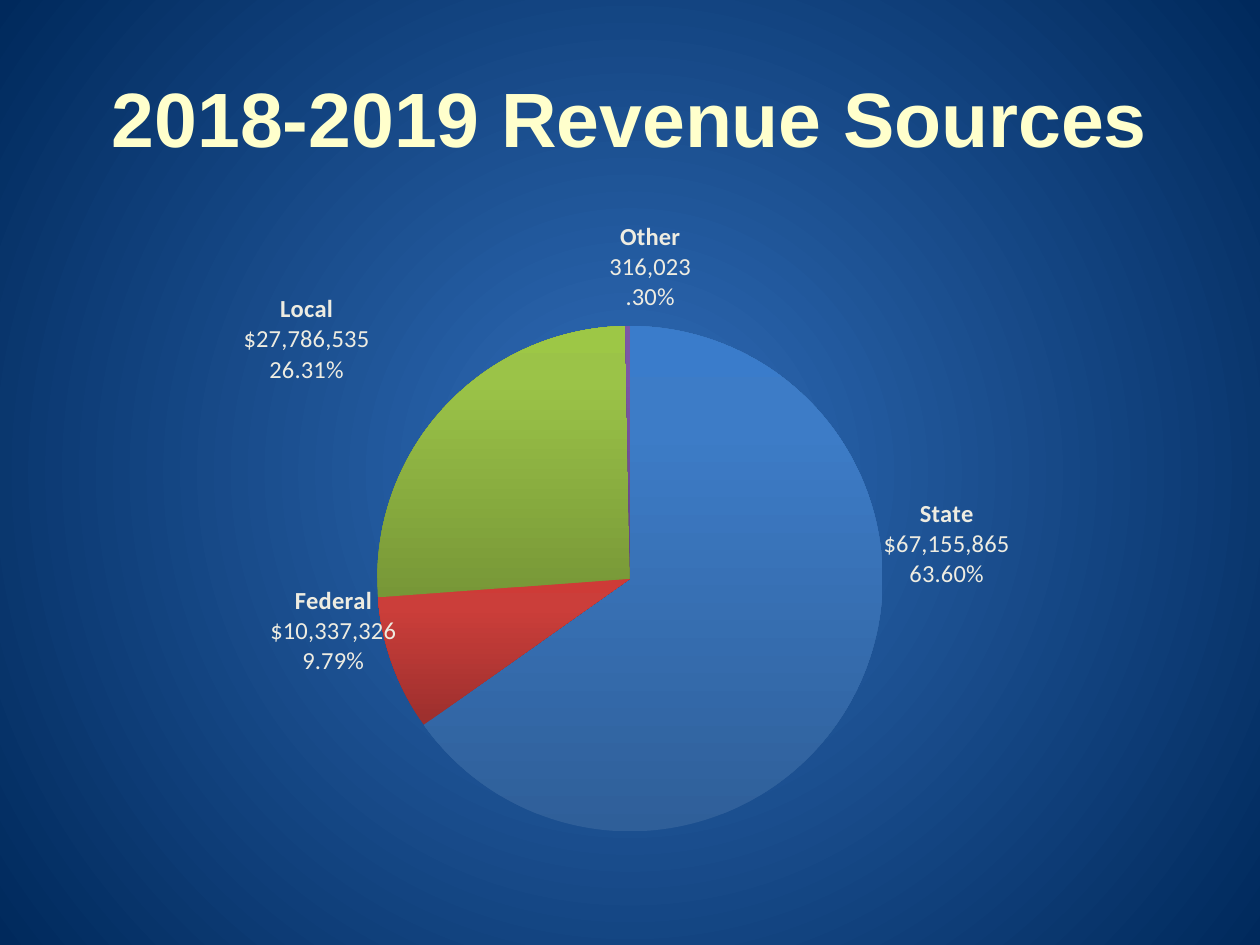
import lxml.etree
import pptx
import pptx.chart.data
import pptx.dml.color
import pptx.enum.chart
import pptx.enum.text
import pptx.oxml
import pptx.oxml.ns
import pptx.util

RGB = pptx.dml.color.RGBColor
qn = pptx.oxml.ns.qn

CREAM = RGB(0xFF, 0xFF, 0xCC)
IVORY = RGB(0xEE, 0xEC, 0xE1)
WHITE = RGB(0xFF, 0xFF, 0xFF)
BACKDROP = [(10, RGB(0x2C, 0x67, 0xB0)), (100, RGB(0x00, 0x29, 0x5C))]
BLUES = RGB(0x2F, 0x5F, 0x99), RGB(0x3D, 0x7C, 0xC7), RGB(0x3A, 0x7C, 0xCB)
REDS = RGB(0x9C, 0x2F, 0x2D), RGB(0xCB, 0x3E, 0x3A), RGB(0xCE, 0x3B, 0x37)
GREENS = RGB(0x77, 0x97, 0x37), RGB(0x9B, 0xC3, 0x48), RGB(0x9D, 0xC7, 0x46)
PURPLES = RGB(0x5F, 0x44, 0x80), RGB(0x7B, 0x58, 0xA6), RGB(0x7C, 0x57, 0xA8)
SLICE_STOPS = 0, 80, 100

TITLE = "2018-2019 Revenue Sources"
# value, label lines, slice colours, label shift from its usual place in px
SOURCES = [
    (63935033, ("State", "$67,155,865", "63.60%"), BLUES, (18, -198)),
    (8462507, ("Federal", "$10,337,326", "9.79%"), REDS, (8, -79)),
    (25383613, ("Local", "$27,786,535", "26.31%"), GREENS, (-65, -16)),
    (287516, ("Other", "316,023", ".30%"), PURPLES, (27, -6)),
]

EMU_PER_PX = 914400 / 126
TITLE_BOX = 63, 38, 1134, 158
CHART_BOX = 63, 220, 1134, 624
PLOT_LAYOUT = {"layoutTarget": "inner", "xMode": "edge", "yMode": "edge",
               "x": 0.08, "y": 0.17, "w": 0.84, "h": 0.81}


def emu(box):
    return [pptx.util.Emu(round(px * EMU_PER_PX)) for px in box]


def write(paragraph, text, size, font, color, bold=False):
    run = paragraph.add_run()
    run.text = text
    run.font.size = pptx.util.Pt(size)
    run.font.name = font
    run.font.bold = bold
    run.font.color.rgb = color
    paragraph.alignment = pptx.enum.text.PP_ALIGN.CENTER


def set_gradient(grad_fill, stops, circle=False):
    """Replace the content of a gradFill with the given stops and direction."""
    for child in list(grad_fill):
        grad_fill.remove(child)
    stop_list = lxml.etree.SubElement(grad_fill, qn("a:gsLst"))
    for percent, color in stops:
        stop = lxml.etree.SubElement(stop_list, qn("a:gs"), pos=str(percent * 1000))
        lxml.etree.SubElement(stop, qn("a:srgbClr"), val=str(color))
    if circle:
        shade = lxml.etree.SubElement(grad_fill, qn("a:path"), path="circle")
        sides = dict.fromkeys("ltrb", "50000")
        lxml.etree.SubElement(shade, qn("a:fillToRect"), **sides)
    else:
        lxml.etree.SubElement(grad_fill, qn("a:lin"), ang="16200000", scaled="0")


def make_layout(settings):
    layout = pptx.oxml.parse_xml(
        f'<c:layout {pptx.oxml.ns.nsdecls("c")}><c:manualLayout/></c:layout>')
    for tag, value in settings.items():
        lxml.etree.SubElement(layout[0], qn(f"c:{tag}"), val=str(value))
    return layout


def add_revenue_pie(slide):
    data = pptx.chart.data.CategoryChartData(number_format="#,##0")
    data.categories = [str(number) for number in range(1, len(SOURCES) + 1)]
    data.add_series("Series 1", [source[0] for source in SOURCES])
    chart = slide.shapes.add_chart(
        pptx.enum.chart.XL_CHART_TYPE.PIE, *emu(CHART_BOX), data).chart
    chart.has_title = False
    chart.has_legend = False
    chart.font.size = pptx.util.Pt(10)
    chart.font.name = "Calibri"
    chart.font.color.rgb = WHITE
    pie = chart.plots[0]
    pie.vary_by_categories = True
    revenue = pie.series[0]

    labels = revenue.data_labels
    labels.show_value = True
    labels.number_format = "#,##0"
    labels.number_format_is_linked = False
    labels.position = pptx.enum.chart.XL_LABEL_POSITION.BEST_FIT
    labels.font.size = pptx.util.Pt(14)
    labels.font.name = "Calibri"
    labels.font.color.rgb = IVORY

    for index, (_, lines, _, _) in enumerate(SOURCES):
        point = revenue.points[index]
        point.format.fill.gradient()
        label = point.data_label
        frame = label.text_frame
        for row, line in enumerate(lines):
            paragraph = frame.add_paragraph() if row else frame.paragraphs[0]
            write(paragraph, line, 14, "Calibri", IVORY, bold=row == 0)
        label.position = pptx.enum.chart.XL_LABEL_POSITION.BEST_FIT

    root = chart.element
    fills = root.iter(qn("a:gradFill"))
    label_nodes = root.iter(qn("c:dLbl"))
    for source, fill, node in zip(SOURCES, list(fills), list(label_nodes)):
        set_gradient(fill, zip(SLICE_STOPS, source[2]))
        dx, dy = source[3]
        shift = {"x": round(dx / CHART_BOX[2], 2), "y": round(dy / CHART_BOX[3], 2)}
        node.find(qn("c:idx")).addnext(make_layout(shift))
    for leader in root.iter(qn("c:showLeaderLines")):
        leader.set("val", "0")

    plot_area = root.find(".//" + qn("c:plotArea"))
    for old_layout in plot_area.findall(qn("c:layout")):
        plot_area.remove(old_layout)
    plot_area.insert(0, make_layout(PLOT_LAYOUT))


def main():
    deck = pptx.Presentation()
    deck.slide_width, deck.slide_height = pptx.util.Inches(10), pptx.util.Inches(7.5)
    slide = deck.slides.add_slide(deck.slide_layouts[5])
    slide.background.fill.gradient()
    set_gradient(slide.element.find(".//" + qn("a:gradFill")), BACKDROP, circle=True)

    title = slide.shapes.title
    title.left, title.top, title.width, title.height = emu(TITLE_BOX)
    title.text_frame.vertical_anchor = pptx.enum.text.MSO_ANCHOR.MIDDLE
    write(title.text_frame.paragraphs[0], TITLE, 44, "Arial", CREAM, bold=True)

    add_revenue_pie(slide)
    deck.save("out.pptx")


if __name__ == "__main__":
    main()
